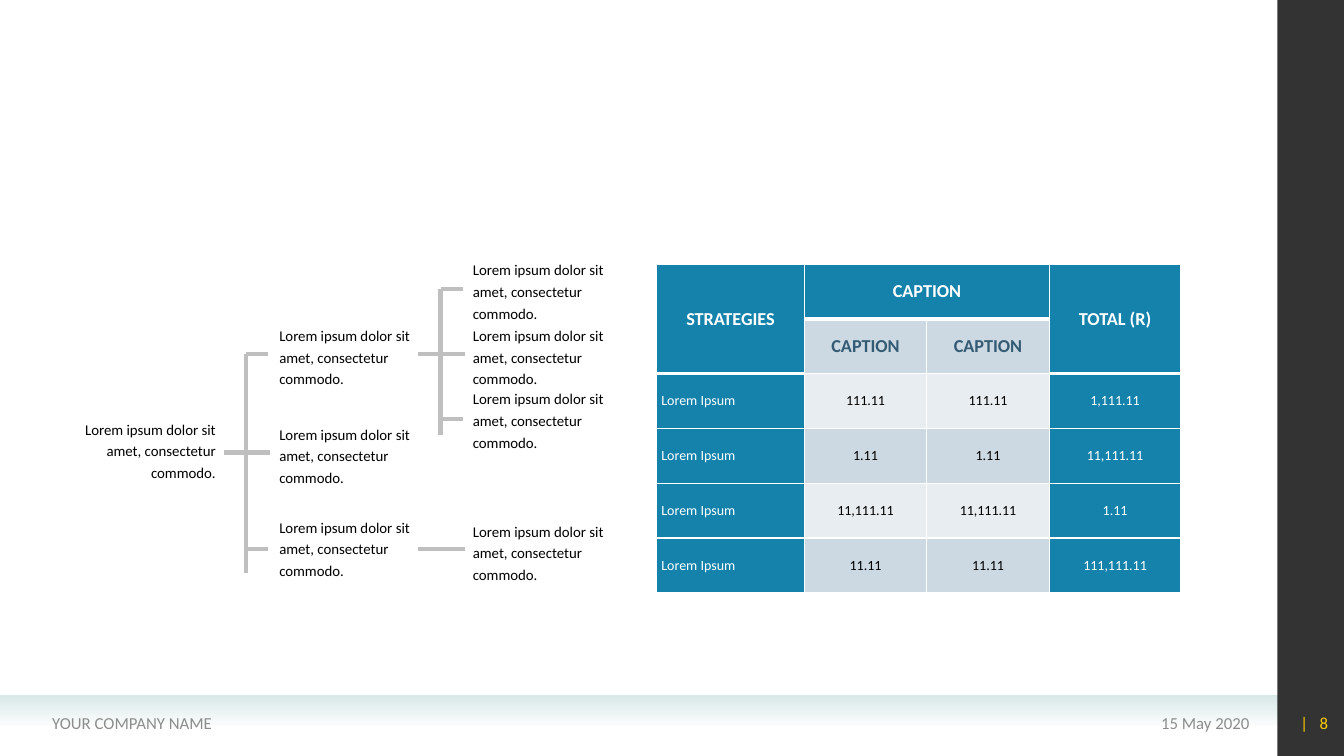
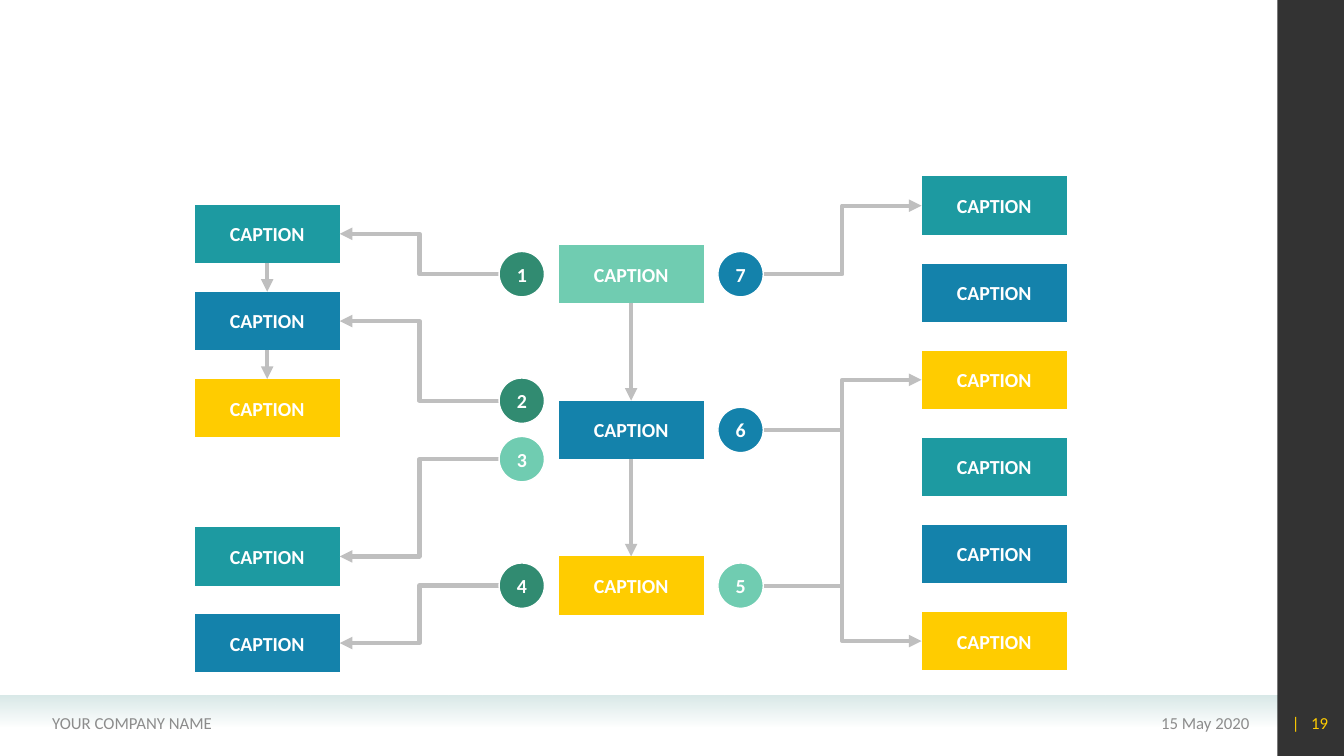
from dataclasses import dataclass

from lxml.etree import SubElement
from pptx import Presentation
from pptx.dml.color import RGBColor
from pptx.enum.shapes import MSO_CONNECTOR, MSO_SHAPE
from pptx.enum.text import MSO_ANCHOR, PP_ALIGN
from pptx.oxml.ns import qn
from pptx.shapes.autoshape import Shape
from pptx.shapes.connector import Connector
from pptx.slide import Slide
from pptx.table import _Cell as Cell
from pptx.text.text import TextFrame, _Paragraph as Para
from pptx.util import Inches, Pt

WHITE = RGBColor(0xFF, 0xFF, 0xFF)
BLACK = RGBColor(0x00, 0x00, 0x00)
GRAY = RGBColor(0x8C, 0x8C, 0x8C)
RULE = RGBColor(0xBF, 0xBF, 0xBF)
MIST = RGBColor(0xD9, 0xE9, 0xE8)
BLUE = RGBColor(0x14, 0x82, 0xAB)
TEAL = RGBColor(0x1D, 0x9A, 0xA1)
GOLD = RGBColor(0xFF, 0xCC, 0x00)
MINT = RGBColor(0x70, 0xCC, 0xB1)
GREEN = RGBColor(0x31, 0x8B, 0x71)
SLATE = RGBColor(0x33, 0x5B, 0x74)
DARK = RGBColor(0xCC, 0xD8, 0xE2)
PALE = RGBColor(0xE7, 0xED, 0xF1)

FONT = "Calibri"
LEFT, CENTER, RIGHT = PP_ALIGN.LEFT, PP_ALIGN.CENTER, PP_ALIGN.RIGHT
FOOT_TOP, FOOT_HIGH = 6.97, 0.4

LOREM = "Lorem ipsum dolor sit amet, consectetur commodo."
NOTE_WIDE, NOTE_HIGH = 1.56, 0.69
STUB = 0.22

BOX_WIDE, BOX_HIGH = 1.44, 0.58
DOT = 0.45


@dataclass
class Note:
    left: float
    top: float
    align: PP_ALIGN = LEFT


@dataclass
class Fork:
    """A vertical bar crossed by a stem, with short ticks to its right."""
    x: float
    stem: float
    ticks: tuple[float, ...]
    foot: float


@dataclass
class Column:
    left: float
    tops: list[float]
    fills: tuple[RGBColor, ...]


@dataclass
class Badge:
    text: str
    left: float
    mid: float
    fill: RGBColor
    goal: int  # index of the box its arrow reaches


NOTES = (
    Note(0.62, 4.11, RIGHT),
    *(Note(2.73, top) for top in (3.18, 4.16, 5.08)),
    *(Note(4.65, top) for top in (2.53, 3.18, 3.81, 5.12)),
)
FORKS = (
    Fork(2.44, 4.49, (3.51, 5.45), 5.68),
    Fork(4.37, 3.51, (2.87, 4.16), 4.32),
)

WIDTHS = (1.47, 1.21, 1.22, 1.3)
CELLS = (
    ("STRATEGIES", "CAPTION", "", "TOTAL (R)"),
    ("", "CAPTION", "CAPTION", ""),
    ("Lorem Ipsum", "111.11", "111.11", "1,111.11"),
    ("Lorem Ipsum", "1.11", "1.11", "11,111.11"),
    ("Lorem Ipsum", "11,111.11", "11,111.11", "1.11"),
    ("Lorem Ipsum", "11.11", "11.11", "111,111.11"),
)


def spread(first: float, last: float, count: int) -> list[float]:
    step = (last - first) / (count - 1)
    return [first + i * step for i in range(count)]


def style(para: Para, size: float, color: RGBColor, align: PP_ALIGN,
          bold: bool = False) -> None:
    para.alignment = align
    font = para.font
    font.name, font.size, font.bold = FONT, Pt(size), bold
    font.color.rgb = color


def inset(frame: TextFrame, x: float, y: float) -> None:
    frame.margin_left = frame.margin_right = Inches(x)
    frame.margin_top = frame.margin_bottom = Inches(y)


def add_text(slide: Slide, left: float, top: float, width: float,
             height: float) -> TextFrame:
    frame = slide.shapes.add_textbox(
        Inches(left), Inches(top), Inches(width), Inches(height)).text_frame
    frame.word_wrap = True
    frame.vertical_anchor = MSO_ANCHOR.MIDDLE
    return frame


def add_block(slide: Slide, kind: MSO_SHAPE, left: float, top: float,
              width: float, height: float, fill: RGBColor) -> Shape:
    shape = slide.shapes.add_shape(
        kind, Inches(left), Inches(top), Inches(width), Inches(height))
    shape.shadow.inherit = False
    shape.fill.solid()
    shape.fill.fore_color.rgb = fill
    shape.line.fill.background()
    return shape


def label(shape: Shape, text: str) -> None:
    frame = shape.text_frame
    inset(frame, 0, 0)
    frame.vertical_anchor = MSO_ANCHOR.MIDDLE
    frame.text = text
    style(frame.paragraphs[0], 14.2, WHITE, CENTER, bold=True)


def fade(shape: Shape, share: int) -> None:
    """Set the opacity, in percent, of the last fill colour."""
    color = shape._element.spPr.findall(".//" + qn("a:srgbClr"))[-1]
    SubElement(color, qn("a:alpha")).set("val", str(share * 1000))


def add_line(slide: Slide, x1: float, y1: float, x2: float, y2: float,
             kind: MSO_CONNECTOR = MSO_CONNECTOR.STRAIGHT,
             arrow: bool = False) -> Connector:
    line = slide.shapes.add_connector(
        kind, Inches(x1), Inches(y1), Inches(x2), Inches(y2))
    line.line.color.rgb = RULE
    line.line.width = Pt(3)
    if arrow:
        SubElement(line.line._get_or_add_ln(), qn("a:tailEnd")).set(
            "type", "triangle")
    SubElement(line._element.spPr, qn("a:effectLst"))
    return line


def add_frame(slide: Slide, page: int) -> None:
    """Draw the bands and the footer that all slides share."""
    band = add_block(slide, MSO_SHAPE.RECTANGLE, 0, 6.9, 12.67, 0.31, MIST)
    band.fill.gradient()
    band.fill.gradient_angle = 270
    for stop in band.fill.gradient_stops:
        stop.color.rgb = MIST
    fade(band, 0)
    side = add_block(slide, MSO_SHAPE.RECTANGLE, 12.67, 0, 0.67, 7.5, BLACK)
    fade(side, 80)

    for text, left, width, align in (
            ("15 May 2020", 9.1, 3.39, RIGHT),
            ("YOUR COMPANY NAME", 0.42, 4.9, LEFT)):
        frame = add_text(slide, left, FOOT_TOP, width, FOOT_HIGH)
        frame.text = text
        style(frame.paragraphs[0], 12, GRAY, align)

    para = add_text(slide, 12.6, FOOT_TOP, 0.67, FOOT_HIGH).paragraphs[0]
    bar = para.add_run()
    bar.text = "| "
    bar._r.get_or_add_rPr().set("spc", "270")
    para.add_run().text = str(page)
    style(para, 12, GOLD, RIGHT)


def add_note(slide: Slide, note: Note) -> None:
    frame = add_text(slide, note.left, note.top, NOTE_WIDE, NOTE_HIGH)
    inset(frame, 0.04, 0.02)
    frame.text = LOREM
    para = frame.paragraphs[0]
    para.line_spacing, para.space_before = Pt(15.5), Pt(2)
    style(para, 10.6, BLACK, note.align)


def add_stem(slide: Slide, x: float, y: float) -> None:
    add_line(slide, x - STUB, y, x + STUB + 0.02, y)


def add_fork(slide: Slide, fork: Fork) -> None:
    add_stem(slide, fork.x, fork.stem)
    for y in fork.ticks:
        add_line(slide, fork.x, y, fork.x + STUB, y)
    add_line(slide, fork.x, fork.ticks[0], fork.x, fork.foot)


def heavy(row: int, col: int) -> bool:
    """Tell whether a thick rule runs below this cell."""
    return row == 0 or (row == 1 and col in (0, 3))


def edge(cell: Cell, row: int, col: int) -> None:
    props = cell._tc.get_or_add_tcPr()
    sides = {"L": 1, "R": 1, "T": 3 if heavy(row - 1, col) else 1,
             "B": 3 if heavy(row, col) else 1}
    for side, width in sides.items():
        line = SubElement(props, qn("a:ln" + side))
        line.set("w", str(Pt(width)))
        fill = SubElement(line, qn("a:solidFill"))
        SubElement(fill, qn("a:srgbClr")).set("val", str(WHITE))


def add_grid(slide: Slide) -> None:
    table = slide.shapes.add_table(
        len(CELLS), len(WIDTHS), Inches(6.51), Inches(2.62),
        Inches(sum(WIDTHS)), Inches(3.26)).table
    table.first_row = table.horz_banding = False
    for col, width in enumerate(WIDTHS):
        table.columns[col].width = Inches(width)
    for first, last in (((0, 0), (1, 0)), ((0, 1), (0, 2)), ((0, 3), (1, 3))):
        table.cell(*first).merge(table.cell(*last))

    for row, texts in enumerate(CELLS):
        for col, text in enumerate(texts):
            cell = table.cell(row, col)
            head, solid = row < 2, row == 0 or col in (0, 3)
            edge(cell, row, col)
            cell.fill.solid()
            cell.fill.fore_color.rgb = (
                BLUE if solid else DARK if row % 2 else PALE)
            cell.vertical_anchor = MSO_ANCHOR.MIDDLE
            cell.margin_left = cell.margin_right = Inches(0.05)
            cell.margin_top = cell.margin_bottom = Inches(0.02)
            cell.text = text
            color = WHITE if solid else SLATE if head else BLACK
            align = LEFT if col == 0 and not head else CENTER
            style(cell.text_frame.paragraphs[0], 13 if head else 10,
                  color, align, bold=head)


def draw_tree(slide: Slide) -> None:
    for note in NOTES:
        add_note(slide, note)
    for fork in FORKS:
        add_fork(slide, fork)
    add_stem(slide, FORKS[1].x, FORKS[0].ticks[-1])
    add_grid(slide)


def add_boxes(slide: Slide, column: Column) -> list[Shape]:
    boxes = [add_block(slide, MSO_SHAPE.FLOWCHART_PROCESS, column.left, top,
                       BOX_WIDE, BOX_HIGH, fill)
             for top, fill in zip(column.tops, column.fills)]
    for box in boxes:
        label(box, "CAPTION")
    return boxes


def add_drops(slide: Slide, boxes: list[Shape]) -> None:
    """Join each box to the next one below with an arrow."""
    for upper, lower in zip(boxes, boxes[1:]):
        line = add_line(slide, 0, 0, 0, 0, arrow=True)
        line.begin_connect(upper, 2)
        line.end_connect(lower, 0)


def add_badge(slide: Slide, badge: Badge, column: Column) -> None:
    goal = column.tops[badge.goal] + BOX_HIGH / 2
    if column.left < badge.left:
        start, end = badge.left, column.left + BOX_WIDE
    else:
        start, end = badge.left + DOT, column.left
    add_line(slide, start, badge.mid, end, goal, MSO_CONNECTOR.ELBOW, True)
    dot = add_block(slide, MSO_SHAPE.OVAL, badge.left, badge.mid - DOT / 2,
                    DOT, DOT, badge.fill)
    dot.line.color.rgb = WHITE
    dot.line.width = Pt(1)
    label(dot, badge.text)


def draw_flow(slide: Slide) -> None:
    trio = (TEAL, BLUE, GOLD)
    west = Column(1.93, spread(2.03, 3.76, 3) + spread(5.23, 6.09, 2),
                  trio + trio[:2])
    core = Column(5.54, spread(2.43, 5.52, 3), (MINT, BLUE, GOLD))
    east = Column(9.14, spread(1.75, 6.07, 6), trio * 2)
    add_drops(slide, add_boxes(slide, west)[:3])
    add_drops(slide, add_boxes(slide, core))
    add_boxes(slide, east)

    high, mid, low = (top + BOX_HIGH / 2 for top in core.tops)
    near, far = 4.95, 7.12
    for badge in (Badge("1", near, high, GREEN, 0),
                  Badge("2", near, mid - BOX_HIGH / 2, GREEN, 1),
                  Badge("3", near, mid + BOX_HIGH / 2, MINT, 3),
                  Badge("4", near, low, GREEN, 4)):
        add_badge(slide, badge, west)
    for badge in (Badge("5", far, low, MINT, 2),
                  Badge("6", far, mid, BLUE, 5),
                  Badge("7", far, high, BLUE, 0)):
        add_badge(slide, badge, east)


def main() -> None:
    deck = Presentation()
    deck.slide_width, deck.slide_height = Inches(13.33), Inches(7.5)
    blank = deck.slide_layouts[6]
    for page, draw in ((8, draw_tree), (19, draw_flow)):
        slide = deck.slides.add_slide(blank)
        add_frame(slide, page)
        draw(slide)
    deck.save("out.pptx")


if __name__ == "__main__":
    main()
